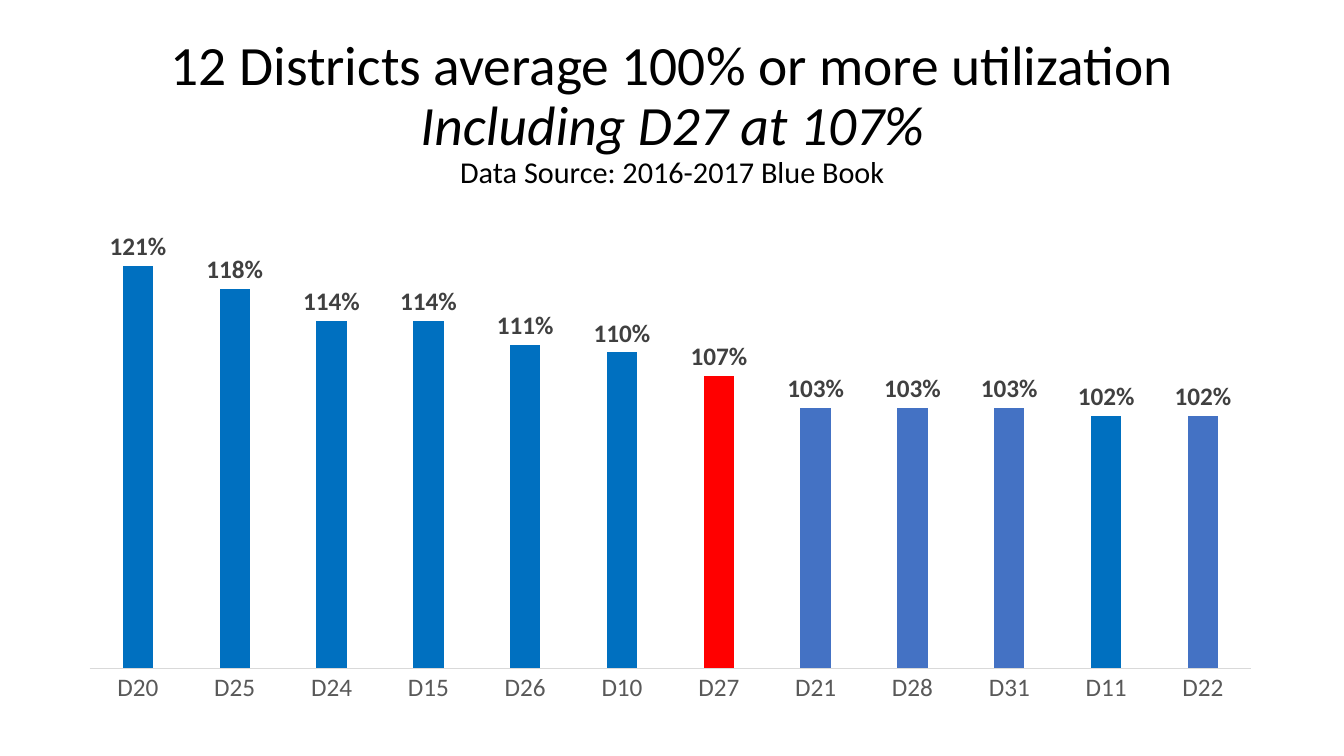
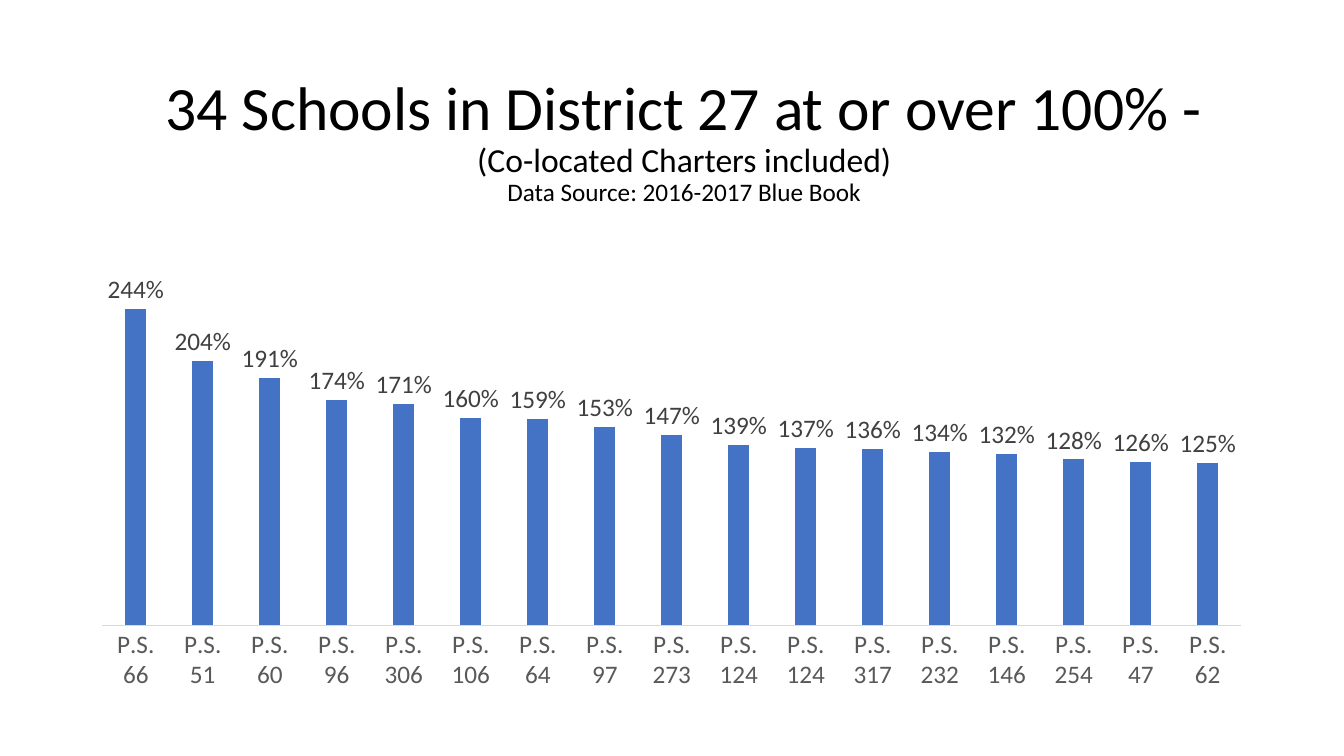
import pptx
import pptx.chart.data
import pptx.dml.color
import pptx.enum.chart
import pptx.enum.text
import pptx.oxml
import pptx.oxml.ns
import pptx.util

Cm = pptx.util.Cm
Pt = pptx.util.Pt
RGBColor = pptx.dml.color.RGBColor

# Shared style
FONT = "Calibri"
BLACK = RGBColor(0x00, 0x00, 0x00)
LABEL_GREY = RGBColor(0x40, 0x40, 0x40)
AXIS_GREY = RGBColor(0x59, 0x59, 0x59)
LINE_GREY = RGBColor(0xD9, 0xD9, 0xD9)
BAR_BLUE = RGBColor(0x44, 0x72, 0xC4)
STRONG_BLUE = RGBColor(0x00, 0x70, 0xC0)
RED = RGBColor(0xFF, 0x00, 0x00)
TITLE_SIZE = (Cm(29.21), Cm(3.68))
SOURCE = "Data Source: 2016-2017 Blue Book"

# Content: title lines are (text, points, italic), bars are (category, value)
SLIDES = [
    {
        "title": [
            ("12 Districts average 100% or more utilization", 39.6, False),
            ("Including D27 at 107%", 39.6, True),
            (SOURCE, 21.6, False),
        ],
        "title_at": (Cm(2.34), Cm(1.02)),
        "bars": [
            ("D20", 1.21), ("D25", 1.18), ("D24", 1.14), ("D15", 1.14),
            ("D26", 1.11), ("D10", 1.10), ("D27", 1.07), ("D21", 1.03),
            ("D28", 1.03), ("D31", 1.03), ("D11", 1.02), ("D22", 1.02),
        ],
        "highlights": {
            **dict.fromkeys(("D20", "D25", "D24", "D15", "D26", "D10", "D11"), STRONG_BLUE),
            "D27": RED,
        },
        "chart_box": (Cm(1.35), Cm(4.9), Cm(30.2), Cm(13.13)),
        "scale": (0.7, 1.3),
        "bold_labels": True,
        "plot": {"x": 0.03, "y": 0, "w": 0.97, "h": 0.91},
    },
    {
        "title": [
            ("34 Schools in District 27 at or over 100% -", 44, False),
            ("(Co-located Charters included)", 24, False),
            (SOURCE, 18, False),
        ],
        "title_at": (Cm(2.64), Cm(1.75)),
        "bars": [
            ("P.S. 66", 2.44), ("P.S. 51", 2.04), ("P.S. 60", 1.91),
            ("P.S. 96", 1.74), ("P.S. 306", 1.71), ("P.S. 106", 1.60),
            ("P.S. 64", 1.59), ("P.S. 97", 1.53), ("P.S. 273", 1.47),
            ("P.S. 124", 1.39), ("P.S. 124", 1.37), ("P.S. 317", 1.36),
            ("P.S. 232", 1.34), ("P.S. 146", 1.32), ("P.S. 254", 1.28),
            ("P.S. 47", 1.26), ("P.S. 62", 1.25),
        ],
        "highlights": {},
        "chart_box": (Cm(1.98), Cm(5.72), Cm(29.9), Cm(11.91)),
        "scale": (0, 3),
        "bold_labels": False,
        "plot": None,
    },
]


def style_font(font, size, color, bold=False, italic=False):
    font.name = FONT
    font.size = Pt(size)
    font.color.rgb = color
    font.bold = bold
    font.italic = italic


def fill_solid(part, color):
    part.format.fill.solid()
    part.format.fill.fore_color.rgb = color


def add_title(slide, lines, position):
    frame = slide.shapes.add_textbox(*position, *TITLE_SIZE).text_frame
    frame.word_wrap = True
    frame.vertical_anchor = pptx.enum.text.MSO_ANCHOR.MIDDLE
    for index, (text, size, italic) in enumerate(lines):
        line = frame.add_paragraph() if index else frame.paragraphs[0]
        line.text = text
        line.alignment = pptx.enum.text.PP_ALIGN.CENTER
        line.line_spacing = 0.9
        style_font(line.font, size, BLACK, italic=italic)


def place_plot(chart, fractions):
    """Fix the inner plot area as fractions of the chart."""
    modes = "".join(f'<c:{axis}Mode val="edge"/>' for axis in "xy")
    sizes = "".join(f'<c:{side} val="{value}"/>' for side, value in fractions.items())
    layout = pptx.oxml.parse_xml(
        f'<c:layout {pptx.oxml.ns.nsdecls("c")}><c:manualLayout>'
        f'<c:layoutTarget val="inner"/>{modes}{sizes}</c:manualLayout></c:layout>'
    )
    plot_area = chart.plots[0]._element.getparent()
    for previous in plot_area.findall(pptx.oxml.ns.qn("c:layout")):
        plot_area.remove(previous)
    plot_area.insert(0, layout)


def add_utilization_chart(slide, content):
    categories, values = zip(*content["bars"])
    utilization = pptx.chart.data.CategoryChartData(number_format="0%")
    utilization.categories = categories
    utilization.add_series("Series 1", values)
    chart = slide.shapes.add_chart(
        pptx.enum.chart.XL_CHART_TYPE.COLUMN_CLUSTERED, *content["chart_box"], utilization
    ).chart
    chart.has_title = False
    chart.has_legend = False
    style_font(chart.font, 10, BLACK)

    # Axes
    districts = chart.category_axis
    districts.major_tick_mark = pptx.enum.chart.XL_TICK_MARK.NONE
    districts.format.line.color.rgb = LINE_GREY
    districts.format.line.width = Pt(0.75)
    style_font(districts.tick_labels.font, 18, AXIS_GREY)
    percent = chart.value_axis
    percent.minimum_scale, percent.maximum_scale = content["scale"]
    percent.has_major_gridlines = False
    percent.visible = False

    # Bars and their labels
    plot = chart.plots[0]
    plot.gap_width = 219
    plot.overlap = -27
    plot.vary_by_categories = False
    bars = plot.series[0]
    fill_solid(bars, BAR_BLUE)
    for index, category in enumerate(categories):
        if category in content["highlights"]:
            fill_solid(bars.points[index], content["highlights"][category])
    labels = bars.data_labels
    labels.show_value = True
    labels.position = pptx.enum.chart.XL_LABEL_POSITION.OUTSIDE_END
    labels.number_format = "0%"
    labels.number_format_is_linked = False
    style_font(labels.font, 18, LABEL_GREY, bold=content["bold_labels"])

    if content["plot"]:
        place_plot(chart, content["plot"])


def main():
    deck = pptx.Presentation()
    deck.slide_width, deck.slide_height = Cm(33.87), Cm(19.05)
    blank = deck.slide_layouts[6]
    for content in SLIDES:
        slide = deck.slides.add_slide(blank)
        add_title(slide, content["title"], content["title_at"])
        add_utilization_chart(slide, content)
    deck.save("out.pptx")


if __name__ == "__main__":
    main()
